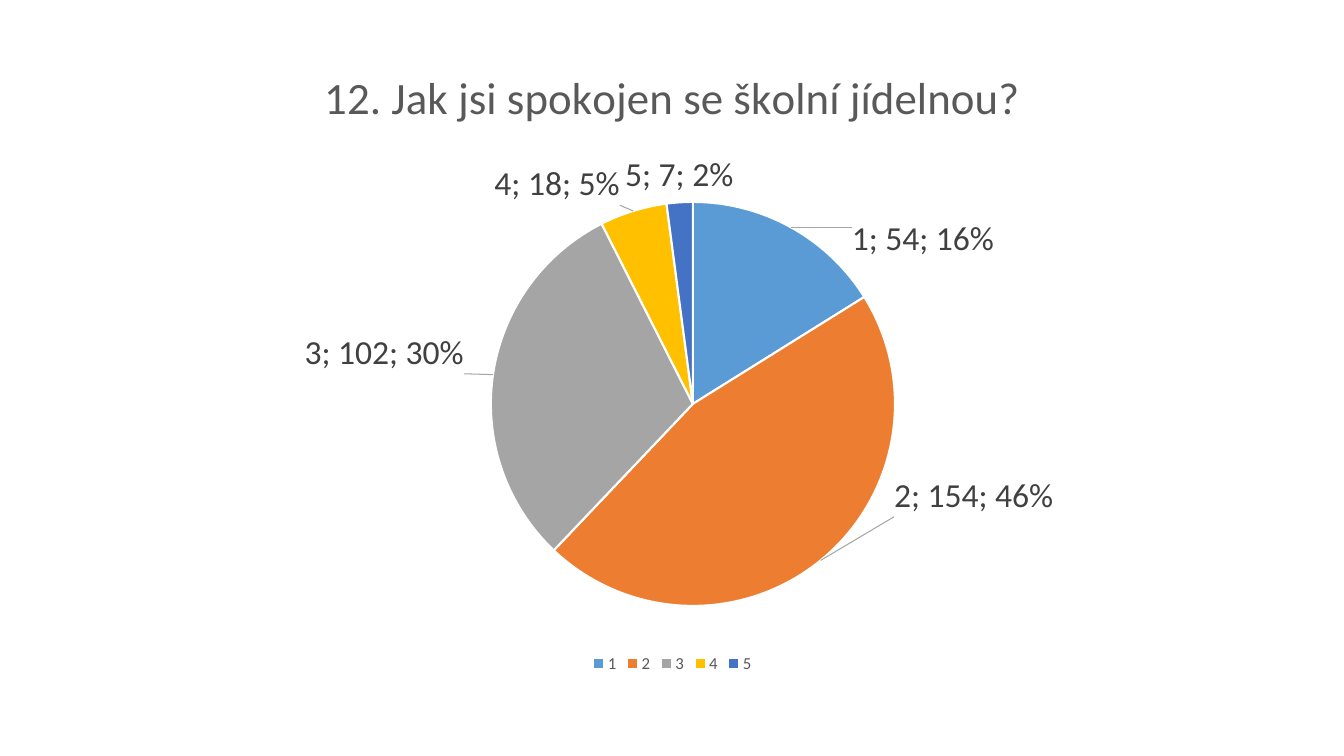
from lxml.etree import SubElement
from pptx import Presentation
from pptx.chart.data import CategoryChartData
from pptx.dml.color import RGBColor
from pptx.enum.chart import XL_CHART_TYPE, XL_LABEL_POSITION, XL_LEGEND_POSITION
from pptx.oxml import parse_xml
from pptx.oxml.ns import nsdecls, qn
from pptx.util import Inches, Pt

WIDTH, HEIGHT = Inches(13.33), Inches(7.5)
FONT = "Calibri"
QUESTION = "12. Jak jsi spokojen se školní jídelnou?"
VOTES = {"1": 54, "2": 154, "3": 102, "4": 18, "5": 7}
WHITE = RGBColor(0xFF, 0xFF, 0xFF)
HEADING_GREY = RGBColor(0x59, 0x59, 0x59)
LABEL_GREY = RGBColor(0x40, 0x40, 0x40)
LEADER_GREY = RGBColor(0xA6, 0xA6, 0xA6)
SLICE_COLORS = [
    RGBColor(0x5B, 0x9B, 0xD5),
    RGBColor(0xED, 0x7D, 0x31),
    RGBColor(0xA5, 0xA5, 0xA5),
    RGBColor(0xFF, 0xC0, 0x00),
    RGBColor(0x44, 0x72, 0xC4),
]
LABEL_SHIFTS = [(0.05, 0.06), (0.06, -0.14), (-0.02, 0), (-0.01, 0)]


def format_font(font, size, color):
    """Set the typeface, size and colour of a font."""
    font.name, font.size, font.bold = FONT, Pt(size), False
    font.color.rgb = color


def write_text(frame, text, size, color):
    """Put one formatted run of text in a text frame."""
    run = frame.paragraphs[0].add_run()
    run.text = text
    format_font(run.font, size, color)


def manual_layout(**settings):
    """Return a chart layout element with the given settings."""
    parts = "".join(f'<c:{key} val="{value}"/>' for key, value in settings.items())
    return parse_xml(
        f'<c:layout {nsdecls("c")}><c:manualLayout>{parts}</c:manualLayout></c:layout>'
    )


def show_category_value_percent(label_xml):
    """Make a label element show category, value and percentage."""
    for tag in ("c:showVal", "c:showCatName", "c:showPercent"):
        label_xml.find(qn(tag)).set("val", "1")
    separator = parse_xml(f'<c:separator {nsdecls("c")}>; </c:separator>')
    label_xml.find(qn("c:showPercent")).getnext().addnext(separator)


def add_leader_lines(labels_xml):
    """Join shifted labels to their slices with thin lines."""
    for old in labels_xml.findall(qn("c:showLeaderLines")):
        labels_xml.remove(old)
    SubElement(labels_xml, qn("c:showLeaderLines")).set("val", "1")
    labels_xml.append(parse_xml(
        f'<c:leaderLines {nsdecls("c", "a")}><c:spPr><a:ln w="9525"><a:solidFill>'
        f'<a:srgbClr val="{LEADER_GREY}"/></a:solidFill></a:ln></c:spPr></c:leaderLines>'
    ))


def format_labels(series):
    """Format the slice labels and shift those that need room."""
    labels = series.data_labels
    labels.position = XL_LABEL_POSITION.OUTSIDE_END
    format_font(labels.font, 24, LABEL_GREY)
    labels_xml = series._element.find(qn("c:dLbls"))
    if labels_xml.find(qn("c:showBubbleSize")) is None:
        bubble = parse_xml(f'<c:showBubbleSize {nsdecls("c")} val="0"/>')
        labels_xml.find(qn("c:showPercent")).addnext(bubble)
    show_category_value_percent(labels_xml)
    add_leader_lines(labels_xml)
    for index, (x, y) in enumerate(LABEL_SHIFTS):
        label = series.points[index].data_label
        label.position = XL_LABEL_POSITION.OUTSIDE_END
        format_font(label.font, 24, LABEL_GREY)
    for label_xml, (x, y) in zip(labels_xml.findall(qn("c:dLbl")), LABEL_SHIFTS):
        label_xml.find(qn("c:idx")).addnext(manual_layout(x=x, y=y))
        show_category_value_percent(label_xml)


def color_slices(series):
    """Fill each slice and outline it in white."""
    for index, color in enumerate(SLICE_COLORS):
        slice_format = series.points[index].format
        slice_format.fill.solid()
        slice_format.fill.fore_color.rgb = color
        slice_format.line.color.rgb = WHITE
        slice_format.line.width = Pt(1.5)


def add_survey_pie(slide):
    """Add the pie chart of the survey answers."""
    answers = CategoryChartData()
    answers.categories = list(VOTES)
    answers.add_series(QUESTION, VOTES.values())
    chart = slide.shapes.add_chart(
        XL_CHART_TYPE.PIE, int(WIDTH * 0.069), int(HEIGHT * 0.053),
        int(WIDTH * 0.863), int(HEIGHT * 0.843), answers,
    ).chart
    chart.font.name, chart.font.size = FONT, Pt(10)
    chart.has_title = True
    write_text(chart.chart_title.text_frame, QUESTION, 32, HEADING_GREY)
    chart.has_legend = True
    chart.legend.position = XL_LEGEND_POSITION.BOTTOM
    chart.legend.include_in_layout = False
    format_font(chart.legend.font, 12, HEADING_GREY)
    pie = chart.plots[0]
    pie.vary_by_categories = True
    color_slices(pie.series[0])
    format_labels(pie.series[0])
    plot_area = pie._element.getparent()
    for old in plot_area.findall(qn("c:layout")):
        plot_area.remove(old)
    plot_area.insert(0, manual_layout(
        layoutTarget="inner", xMode="edge", yMode="edge",
        x=0.343, y=0.254, w=0.349, h=0.634,
    ))


def main():
    """Build and save the survey slide."""
    deck = Presentation()
    deck.slide_width, deck.slide_height = WIDTH, HEIGHT
    add_survey_pie(deck.slides.add_slide(deck.slide_layouts[6]))
    deck.save("out.pptx")


if __name__ == "__main__":
    main()
